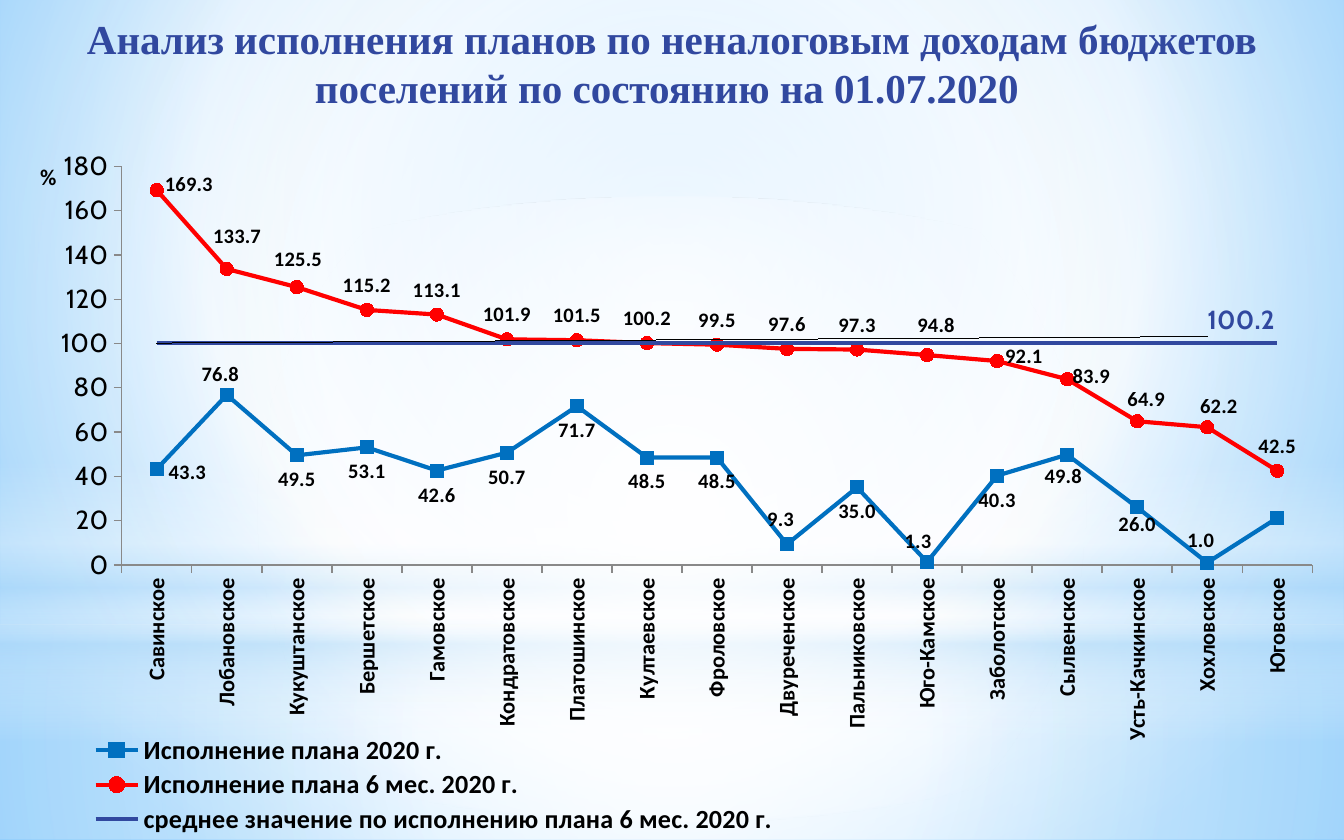
from lxml.etree import SubElement
from pptx import Presentation
from pptx.chart.data import CategoryChartData
from pptx.dml.color import RGBColor
from pptx.enum.chart import XL_CHART_TYPE as Chart, XL_LABEL_POSITION as Pos
from pptx.enum.chart import XL_LEGEND_POSITION as Legend, XL_MARKER_STYLE as Marker
from pptx.enum.chart import XL_TICK_MARK as Tick
from pptx.enum.shapes import MSO_SHAPE as Shape
from pptx.enum.text import PP_ALIGN as Align
from pptx.oxml import parse_xml
from pptx.oxml.ns import nsdecls, qn
from pptx.util import Inches, Pt

COLORS = {"navy": "31489F", "blue": "0070C0", "red": "FF0000", "black": "000000",
          "axis": "898989", "white": "FFFFFF", "sky": "B4DCFA",
          "light": "9ED5FF", "deep": "5BB9FF"}
CENTER = (50, 50, 50, 50)


def gradient(stops, focus=None):
    """Gradient of (position, colour, opacity): radial round a focus, or downward."""
    marks = "".join(
        f'<a:gs pos="{pos * 1000}"><a:srgbClr val="{COLORS[name]}">'
        f'<a:alpha val="{alpha * 1000}"/></a:srgbClr></a:gs>' for pos, name, alpha in stops)
    if focus:
        sides = " ".join(f'{side}="{share * 1000}"' for side, share in zip("ltrb", focus))
        way = f'<a:path path="circle"><a:fillToRect {sides}/></a:path>'
    else:
        way = '<a:lin ang="5400000" scaled="0"/>'
    return parse_xml(f'<a:gradFill {nsdecls("a")} rotWithShape="1">'
                     f'<a:gsLst>{marks}</a:gsLst>{way}</a:gradFill>')


def layout(x, y, size=None):
    """Manual chart layout in shares of the chart."""
    mode = '<c:xMode val="edge"/><c:yMode val="edge"/>' if size else ""
    extent = f'<c:w val="{size[0]}"/><c:h val="{size[1]}"/>' if size else ""
    return parse_xml(f'<c:layout {nsdecls("c")}><c:manualLayout>{mode}<c:x val="{x}"/>'
                     f'<c:y val="{y}"/>{extent}</c:manualLayout></c:layout>')


class Deck:
    def __init__(self, width, height):
        self.deck = Presentation()
        self.deck.slide_width, self.deck.slide_height = Inches(width), Inches(height)
        self.page = self.deck.slides.add_slide(self.deck.slide_layouts[6])

    def frame(self, left, top, width, height):
        """Shares of the slide to lengths."""
        wide, high = self.deck.slide_width, self.deck.slide_height
        return int(left * wide), int(top * high), int(width * wide), int(height * high)

    def style(self, font, size, color="black", bold=True, name="Calibri"):
        font.size, font.bold, font.name = Pt(size), bold, name
        font.color.rgb = RGBColor.from_string(COLORS[color])

    def background(self, stops, focus):
        fill = self.page.background.fill
        fill.solid()
        props = self.page.element.cSld.find(qn("p:bg")).find(qn("p:bgPr"))
        props.replace(props[0], gradient(stops, focus))

    def glow(self, kind, share, stops, focus=None):
        shape = self.page.shapes.add_shape(kind, *self.frame(*share))
        shape.shadow.inherit = False
        shape.line.fill.background()
        shape.fill.solid()
        props = shape.element.spPr
        props.replace(props.find(qn("a:solidFill")), gradient(stops, focus))

    def title(self, share, text):
        box = self.page.shapes.add_textbox(*self.frame(*share))
        box.text_frame.word_wrap = True
        para = box.text_frame.paragraphs[0]
        para.alignment = Align.CENTER
        span = para.add_run()
        span.text = text
        self.style(span.font, 22, "navy", name="Times New Roman")

    def line_chart(self, share, names, rows):
        data = CategoryChartData(number_format="0.0")
        data.categories = names
        for row in rows:
            data.add_series(row[0], row[1])
        chart = self.page.shapes.add_chart(Chart.LINE_MARKERS, *self.frame(*share), data).chart
        chart.has_title = False
        self.style(chart.font, 18, bold=False, name="Cabin")
        area = chart.plots[0]._element.getparent()
        old = area.find(qn("c:layout"))
        if old is not None:
            area.remove(old)
        inner = layout(0.069, 0.099, (0.918, 0.526))
        inner[0].insert(0, parse_xml(f'<c:layoutTarget {nsdecls("c")} val="inner"/>'))
        area.insert(0, inner)
        return chart

    def axes(self, chart):
        category, value = chart.category_axis, chart.value_axis
        self.style(category.tick_labels.font, 12)
        category._element.find(qn("c:txPr")).find(qn("a:bodyPr")).set("rot", "-5400000")
        self.style(value.tick_labels.font, 14, bold=False, name="Cabin")
        value.tick_labels.number_format = "#,##0"
        value.tick_labels.number_format_is_linked = False
        value.minimum_scale, value.maximum_scale, value.major_unit = 0, 180, 20
        value.has_major_gridlines = False
        for axis in (category, value):
            axis.major_tick_mark = Tick.OUTSIDE
            axis.format.line.color.rgb = RGBColor.from_string(COLORS["axis"])
            axis.format.line.width = Pt(0.75)
        frame = value.axis_title.text_frame
        span = frame.paragraphs[0].add_run()
        span.text = "%"
        self.style(span.font, 12)
        frame._txBody.find(qn("a:bodyPr")).set("rot", "0")
        title = value.axis_title._element
        for old in title.findall(qn("c:layout")):
            title.remove(old)
        title.find(qn("c:tx")).addnext(layout(0.003, 0.087, (0.02, 0.03)))

    def legend(self, chart):
        chart.has_legend = True
        chart.legend.position = Legend.BOTTOM
        chart.legend.include_in_layout = False
        self.style(chart.legend.font, 14)
        node = chart.legend._element
        for old in node.findall(qn("c:layout")):
            node.remove(old)
        node.find(qn("c:legendPos")).addnext(layout(0.035, 0.845, (0.55, 0.14)))

    def line(self, series, color, marker):
        rgb = RGBColor.from_string(COLORS[color])
        series.smooth = False
        series.format.line.color.rgb = rgb
        series.format.line.width = Pt(2.25)
        series.marker.style = marker
        if marker != Marker.NONE:
            series.marker.size = 7
            series.marker.format.fill.solid()
            series.marker.format.fill.fore_color.rgb = rgb
            series.marker.format.line.color.rgb = rgb

    def labels(self, series, position, moved, hidden=(), leader=False, look=(11,)):
        """Value labels; moved maps a point to its side and shift."""
        labels = series.data_labels
        labels.show_value = position is not None
        labels.number_format, labels.number_format_is_linked = "#,##0.0", False
        self.style(labels.font, *look)
        if position is not None:
            labels.position = position
        for index, (side, x, y) in moved.items():
            label = series.points[index].data_label
            self.style(label.font, *look)
            label.position = side
            node = label._dLbl
            node.insert(1, layout(x, y))
            node.insert(2, parse_xml(f'<c:numFmt {nsdecls("c")} formatCode="#,##0.0" '
                                     'sourceLinked="0"/>'))
        for index in hidden:
            series.points[index].data_label.position = Pos.BELOW
            node = series.points[index].data_label._dLbl
            for child in list(node)[1:]:
                node.remove(child)
            SubElement(node, qn("c:delete")).set("val", "1")
        for old in labels._element.findall(qn("c:showLeaderLines")):
            labels._element.remove(old)
        SubElement(labels._element, qn("c:showLeaderLines")).set("val", str(int(leader)))


SETTLEMENTS = ["Савинское", "Лобановское", "Кукуштанское", "Бершетское", "Гамовское",
               "Кондратовское", "Платошинское", "Култаевское", "Фроловское",
               "Двуреченское", "Пальниковское", "Юго-Камское", "Заболотское",
               "Сылвенское", "Усть-Качкинское", "Хохловское", "Юговское"]
YEAR = [43.3, 76.8, 49.5, 53.1, 42.6, 50.7, 71.7, 48.5, 48.5, 9.3, 35, 1.3, 40.3,
        49.8, 26, 1, 21.2]
HALF = [169.3, 133.7, 125.5, 115.2, 113.1, 101.9, 101.5, 100.2, 99.5, 97.6, 97.3,
        94.8, 92.1, 83.9, 64.9, 62.2, 42.5]
ROWS = [("Исполнение плана 2020 г.", YEAR, "blue", Marker.SQUARE),
        ("Исполнение плана 6 мес. 2020 г.", HALF, "red", Marker.CIRCLE),
        ("среднее значение по исполнению плана 6 мес. 2020 г.",
         [100.2] * len(SETTLEMENTS), "navy", Marker.NONE)]


def main():
    deck = Deck(10, 6.25)

    # Backdrop of soft light
    deck.background([(0, "light", 100), (60, "white", 100), (100, "deep", 100)],
                    (20, 10, 20, 60))
    deck.glow(Shape.RECTANGLE, (0, 0.744, 1, 0.256),
              [(0, "white", 91), (37, "white", 76), (100, "sky", 79)], CENTER)
    deck.glow(Shape.RECTANGLE, (0, 0, 1, 0.744),
              [(0, "white", 89), (48, "white", 62), (100, "sky", 79)], CENTER)
    deck.glow(Shape.RECTANGLE, (0, 0.55, 1, 0.333),
              [(0, "white", 0), (29, "white", 30), (45, "sky", 40), (55, "white", 26),
               (65, "sky", 60), (100, "white", 0)])
    deck.glow(Shape.OVAL, (0, 0.234, 1, 0.744),
              [(0, "white", 100), (56, "white", 0)], CENTER)

    # Heading
    deck.title((0, 0.008, 1, 0.176), "Анализ исполнения планов по неналоговым доходам "
               "бюджетов поселений по состоянию на 01.07.2020 ")

    # Chart
    chart = deck.line_chart((0.024, 0.109, 0.965, 0.902), SETTLEMENTS, ROWS)
    deck.axes(chart)
    deck.legend(chart)
    lines = list(chart.plots[0].series)
    for series, (_, _, color, marker) in zip(lines, ROWS):
        deck.line(series, color, marker)

    # Value labels
    year, half, mean = lines
    deck.labels(year, Pos.BELOW, {
        0: (Pos.RIGHT, 0, 0.005), 1: (Pos.ABOVE, -0.005, 0.005),
        9: (Pos.ABOVE, -0.005, 0), 11: (Pos.ABOVE, -0.007, 0.005),
        13: (Pos.BELOW, -0.003, -0.003), 14: (Pos.BELOW, 0, -0.01),
        15: (Pos.ABOVE, -0.005, 0.003)}, hidden=[16])
    deck.labels(half, Pos.ABOVE, {
        0: (Pos.RIGHT, -0.003, -0.008), 1: (Pos.ABOVE, 0.008, -0.01),
        2: (Pos.ABOVE, 0.001, -0.004), 11: (Pos.ABOVE, 0.007, -0.007),
        12: (Pos.RIGHT, -0.003, -0.006), 13: (Pos.RIGHT, -0.005, -0.004),
        14: (Pos.ABOVE, 0.007, 0.004), 15: (Pos.ABOVE, 0.009, 0.005),
        16: (Pos.ABOVE, 0, 0)})
    deck.labels(mean, None, {0: (Pos.RIGHT, 0.806, -0.03)}, leader=True,
                look=(14, "navy", True, "Cabin"))

    deck.deck.save("out.pptx")


if __name__ == "__main__":
    main()
